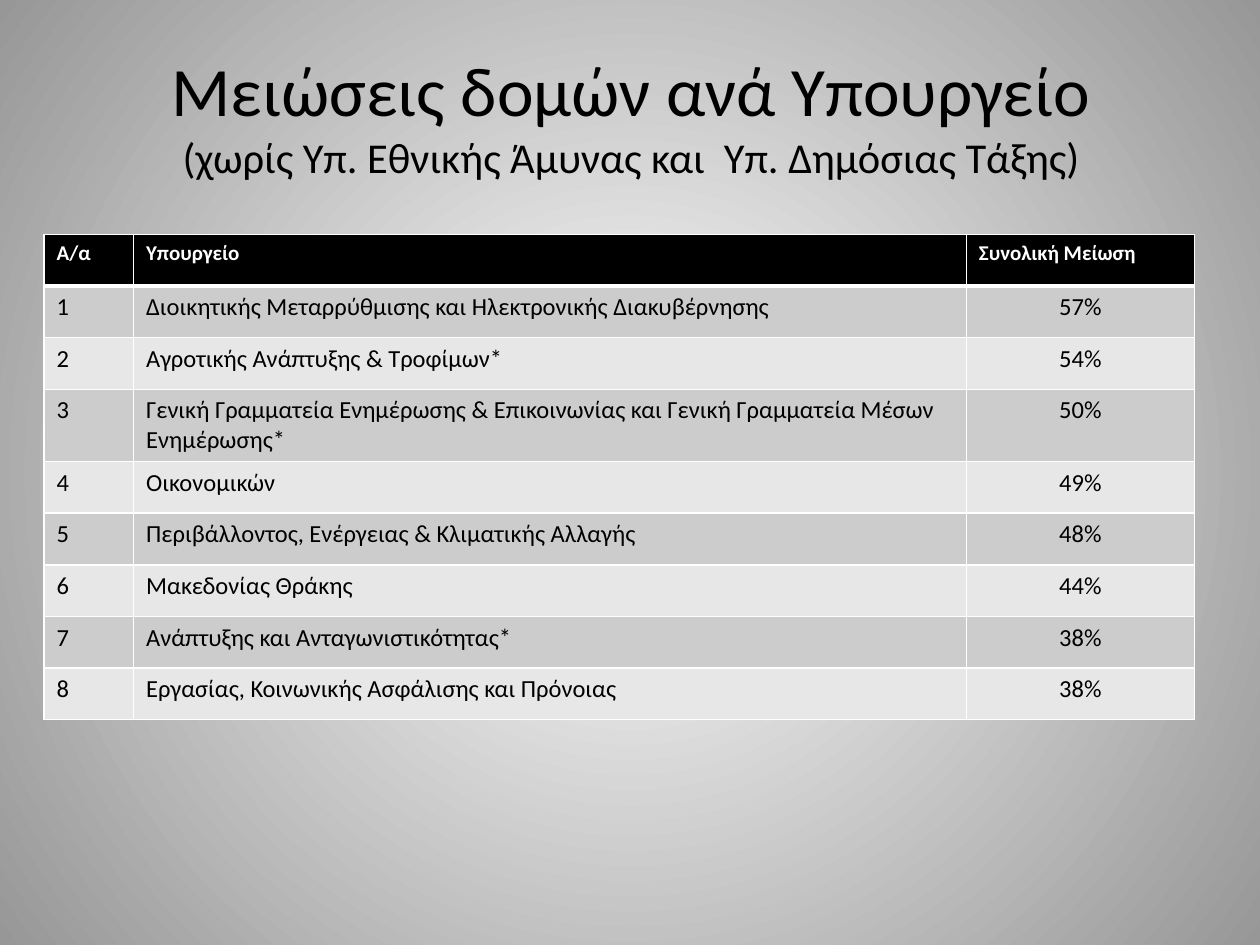
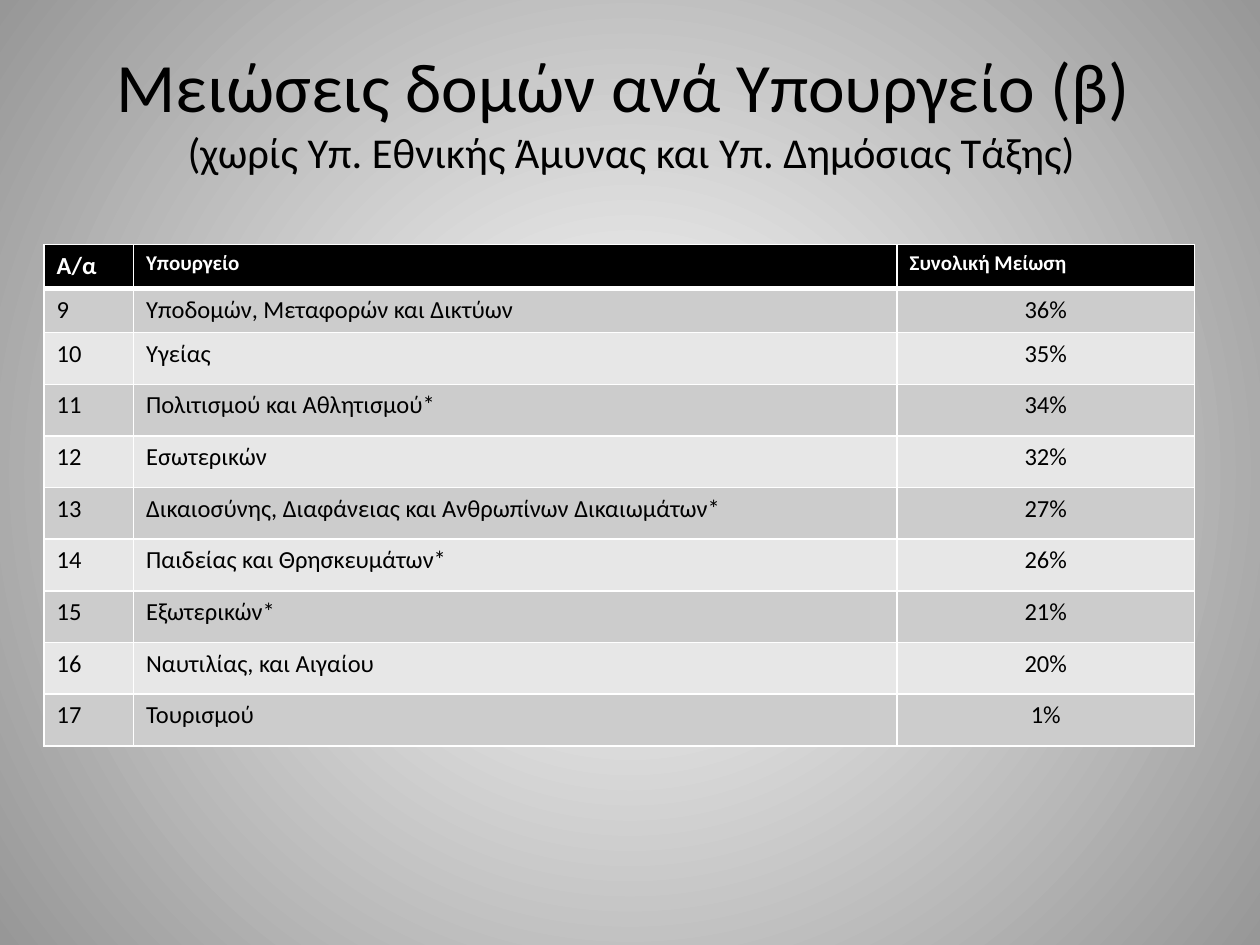
from dataclasses import dataclass

from lxml.etree import SubElement
from pptx import Presentation
from pptx.dml.color import RGBColor
from pptx.enum.text import MSO_ANCHOR, MSO_AUTO_SIZE, PP_ALIGN
from pptx.oxml.ns import qn
from pptx.util import Inches, Pt


@dataclass(frozen=True)
class Theme:
    font: str = "Calibri"
    black: str = "000000"
    white: str = "FFFFFF"
    edge: str = "979797"
    bands: tuple = ("CCCCCC", "E7E7E7")
    title: float = 39.6
    subtitle: float = 24.3
    header: float = 12
    body: float = 14
    rule: float = 1
    header_rule: float = 3


THEME = Theme()
HEADINGS = ("Α/α", "Υπουργείο", "Συνολική Μείωση")

MINISTRIES_A = [
    ("Διοικητικής Μεταρρύθμισης και Ηλεκτρονικής Διακυβέρνησης", 57),
    ("Αγροτικής Ανάπτυξης & Τροφίμων*", 54),
    ("Γενική Γραμματεία Ενημέρωσης & Επικοινωνίας και Γενική Γραμματεία Μέσων Ενημέρωσης*", 50),
    ("Οικονομικών", 49),
    ("Περιβάλλοντος, Ενέργειας & Κλιματικής Αλλαγής", 48),
    ("Μακεδονίας Θράκης", 44),
    ("Ανάπτυξης και Ανταγωνιστικότητας*", 38),
    ("Εργασίας, Κοινωνικής Ασφάλισης και Πρόνοιας", 38),
]
MINISTRIES_B = [
    ("Υποδομών, Μεταφορών και Δικτύων", 36),
    ("Υγείας", 35),
    ("Πολιτισμού και Αθλητισμού*", 34),
    ("Εσωτερικών", 32),
    ("Δικαιοσύνης, Διαφάνειας και Ανθρωπίνων Δικαιωμάτων*", 27),
    ("Παιδείας και Θρησκευμάτων*", 26),
    ("Εξωτερικών*", 21),
    ("Ναυτιλίας, και Αιγαίου", 20),
    ("Τουρισμού", 1),
]


def add_text(p, text, size=THEME.body, color=THEME.black, bold=False, align=PP_ALIGN.LEFT):
    p.alignment = align
    r = p.add_run()
    r.text = text
    r.font.name = THEME.font
    r.font.size = Pt(size)
    r.font.bold = bold
    r.font.color.rgb = RGBColor.from_string(color)


def add_background(s):
    """Radial gradient, light in the centre."""
    fill = s.background.fill
    fill.gradient()
    for stop, color in zip(fill.gradient_stops, (THEME.white, THEME.edge)):
        stop.color.rgb = RGBColor.from_string(color)
    grad = s.element.find(".//" + qn("a:gradFill"))
    grad.remove(grad.find(qn("a:lin")))
    circle = SubElement(grad, qn("a:path"), {"path": "circle"})
    SubElement(circle, qn("a:fillToRect"), dict.fromkeys("ltrb", "50000"))


def add_title(s, box, title, subtitle):
    tf = s.shapes.add_textbox(*map(Inches, box)).text_frame
    tf.word_wrap = True
    tf.auto_size = MSO_AUTO_SIZE.NONE
    tf.vertical_anchor = MSO_ANCHOR.MIDDLE
    p = tf.paragraphs[0]
    add_text(p, title, size=THEME.title, align=PP_ALIGN.CENTER)
    p.add_line_break()
    add_text(p, subtitle, size=THEME.subtitle, align=PP_ALIGN.CENTER)


def style_cell(cell, fill, top, bottom):
    """White borders first, then the fill, as the schema orders them."""
    tc_pr = cell._tc.get_or_add_tcPr()
    for side, width in zip("LRTB", (THEME.rule, THEME.rule, top, bottom)):
        ln = SubElement(tc_pr, qn(f"a:ln{side}"), {"w": str(Pt(width))})
        solid = SubElement(ln, qn("a:solidFill"))
        SubElement(solid, qn("a:srgbClr"), {"val": THEME.white})
    cell.fill.solid()
    cell.fill.fore_color.rgb = RGBColor.from_string(fill)


def add_ministry_table(s, box, col_widths, row_heights, ministries, first, number_size):
    rows = [HEADINGS] + [
        (str(n), name, f"{cut}%") for n, (name, cut) in enumerate(ministries, first)
    ]
    table = s.shapes.add_table(len(rows), len(HEADINGS), *map(Inches, box)).table
    table.horz_banding = False
    for col, width in zip(table.columns, col_widths):
        col.width = Inches(width)

    for i, (row, height) in enumerate(zip(table.rows, row_heights)):
        row.height = Inches(height)
        for j, cell in enumerate(row.cells):
            p = cell.text_frame.paragraphs[0]
            if i == 0:
                style_cell(cell, THEME.black, THEME.rule, THEME.header_rule)
                size = number_size if j == 0 else THEME.header
                add_text(p, rows[i][j], size=size, color=THEME.white, bold=True)
            else:
                top = THEME.header_rule if i == 1 else THEME.rule
                style_cell(cell, THEME.bands[(i - 1) % 2], top, THEME.rule)
                add_text(p, rows[i][j], align=PP_ALIGN.CENTER if j == 2 else PP_ALIGN.LEFT)


def add_ministry_slide(prs, title, subtitle, title_box, **table):
    s = prs.slides.add_slide(prs.slide_layouts[6])
    add_background(s)
    add_title(s, title_box, title, subtitle)
    add_ministry_table(s, **table)


def main():
    prs = Presentation()
    prs.slide_width, prs.slide_height = Inches(10), Inches(7.5)

    # Ministries 1 to 8
    add_ministry_slide(
        prs, "Μειώσεις δομών ανά Υπουργείο",
        "(χωρίς Υπ. Εθνικής Άμυνας και  Υπ. Δημόσιας Τάξης)",
        title_box=(0.51, 0.44, 9, 0.94),
        box=(0.35, 1.86, 9.13, 3.85),
        col_widths=(0.71, 6.61, 1.81),
        row_heights=[0.41] * 9,
        ministries=MINISTRIES_A, first=1, number_size=THEME.header,
    )
    # Ministries 9 to 17
    add_ministry_slide(
        prs, "Μειώσεις δομών ανά Υπουργείο (β) ",
        "(χωρίς Υπ. Εθνικής Άμυνας και Υπ. Δημόσιας Τάξης)",
        title_box=(0.51, 0.44, 9, 0.87),
        box=(0.35, 1.94, 9.13, 3.98),
        col_widths=(0.71, 6.06, 2.36),
        row_heights=[0.35] * 2 + [0.41] * 8,
        ministries=MINISTRIES_B, first=9, number_size=THEME.body,
    )
    prs.save("out.pptx")


if __name__ == "__main__":
    main()
